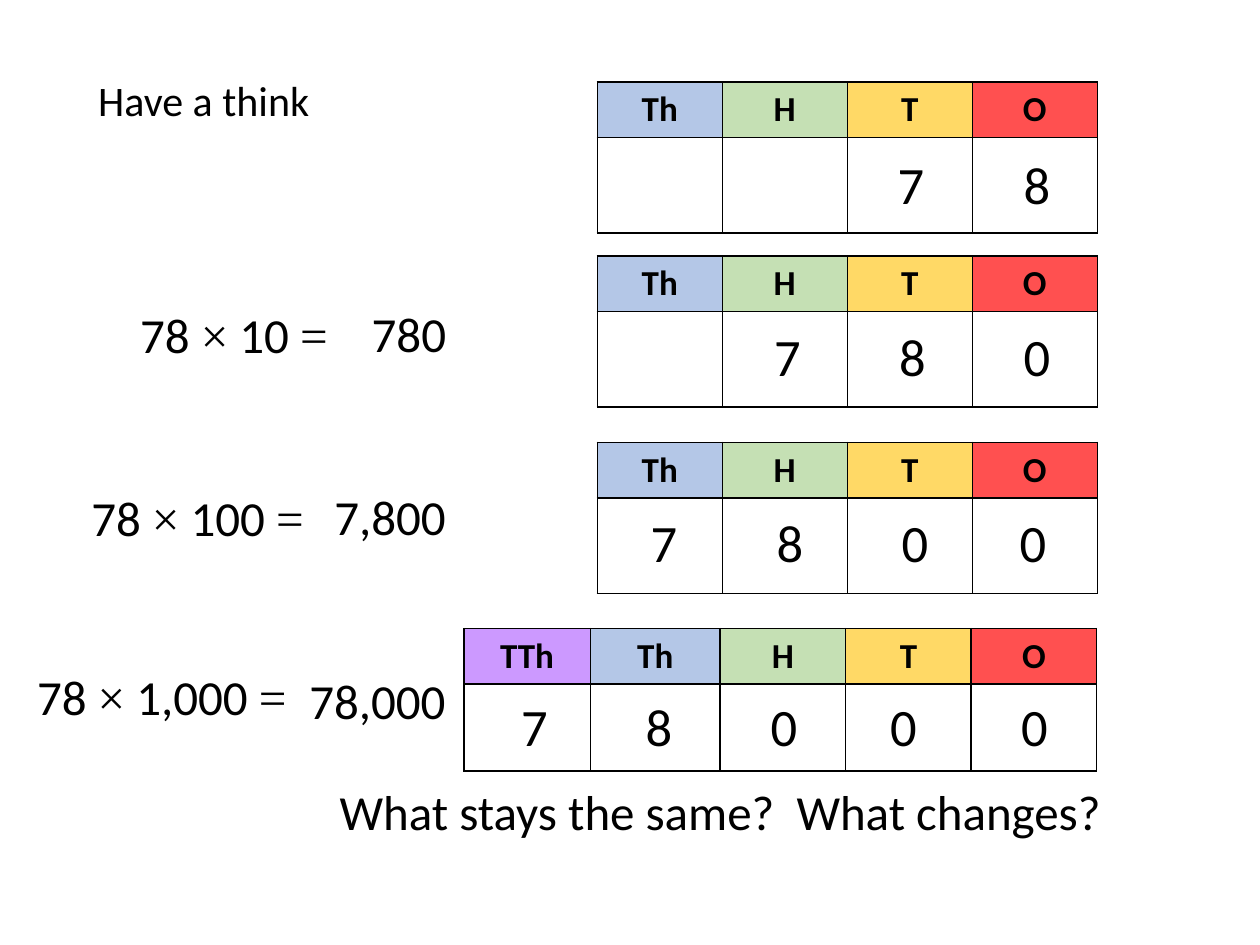
from lxml.etree import SubElement
from pptx import Presentation
from pptx.dml.color import RGBColor
from pptx.enum.text import MSO_ANCHOR, MSO_AUTO_SIZE, PP_ALIGN
from pptx.oxml.ns import qn
from pptx.util import Cm, Pt


def paint(text):
    return RGBColor.from_string(text)


class Page:
    font = "Calibri"
    sign = "Times New Roman"
    ink = "000000"
    fills = {"TTh": "CC99FF", "Th": "B4C7E7", "H": "C5E0B4",
             "T": "FFD966", "O": "FF5050"}

    def __init__(self, slide):
        self.slide = slide

    def style(self, run, size, bold=False):
        run.font.name = self.sign if run.text.strip() in ("×", "=") else self.font
        run.font.size = Pt(size)
        run.font.bold = bold
        run.font.color.rgb = paint(self.ink)

    def text(self, parts, left, top, width, height, size,
             align=PP_ALIGN.CENTER, wrap=False):
        box = self.slide.shapes.add_textbox(
            Cm(left), Cm(top), Cm(width), Cm(height))
        frame = box.text_frame
        frame.word_wrap = wrap
        frame.auto_size = MSO_AUTO_SIZE.SHAPE_TO_FIT_TEXT
        line = frame.paragraphs[0]
        line.alignment = align
        for part in parts:
            run = line.add_run()
            run.text = part
            self.style(run, size)

    def border(self, cell):
        props = cell._tc.get_or_add_tcPr()
        for side in ("lnL", "lnR", "lnT", "lnB"):
            edge = SubElement(props, qn(f"a:{side}"), w=str(Pt(1)))
            fill = SubElement(edge, qn("a:solidFill"))
            SubElement(fill, qn("a:srgbClr"), val=self.ink)

    def table(self, heads, left, top, widths, heights):
        shape = self.slide.shapes.add_table(
            2, len(heads), Cm(left), Cm(top), Cm(sum(widths)), Cm(sum(heights)))
        grid = shape.table
        grid.horz_banding = False
        for row, height in zip(grid.rows, heights):
            row.height = Cm(height)
        for col, (head, width) in enumerate(zip(heads, widths)):
            grid.columns[col].width = Cm(width)
            top_cell, low_cell = grid.cell(0, col), grid.cell(1, col)
            self.border(top_cell)
            self.border(low_cell)
            low_cell.fill.background()
            top_cell.fill.solid()
            top_cell.fill.fore_color.rgb = paint(self.fills[head])
            top_cell.vertical_anchor = MSO_ANCHOR.MIDDLE
            top_cell.text_frame.text = head
            line = top_cell.text_frame.paragraphs[0]
            line.alignment = PP_ALIGN.CENTER
            self.style(line.runs[0], 20, True)

    def digits(self, marks, lefts, top):
        for mark, left in zip(marks, lefts):
            self.text([mark], left, top, 1.07, 1.55, 30)

    def sum(self, times, left, top, width):
        self.text(["78 ", "×", f" {times} ", "= "], left, top, width, 1.45, 28)

    def answer(self, value, top, width):
        self.text([value], 9.26 - width, top, width, 1.45, 28)


def main():
    deck = Presentation()
    deck.slide_width, deck.slide_height = Cm(25.4), Cm(19.05)
    page = Page(deck.slides.add_slide(deck.slide_layouts[6]))

    heads = ["Th", "H", "T", "O"]
    for top in (1.65, 5.16, 8.92):
        page.table(heads, 12.04, top, [2.52] * 4, [1.11, 1.93])
    page.table(["TTh"] + heads, 9.35, 12.67,
               [2.55, 2.62, 2.53, 2.53, 2.53], [1.11, 1.75])

    page.digits("78", [17.83, 20.37], 2.95)
    page.digits("780", [15.34, 17.86, 20.37], 6.4)
    page.digits("7800", [12.85, 15.39, 17.91, 20.29], 10.16)
    page.digits("78000", [10.24, 12.75, 15.27, 17.68, 20.32], 13.87)

    page.sum("10", 2.39, 6.02, 4.9)
    page.sum("100", 1.4, 9.7, 5.41)
    page.sum("1,000", 0.3, 13.31, 6.17)

    page.answer("780", 5.99, 2.03)
    page.answer("7,800", 9.68, 2.79)
    page.answer("78,000", 13.39, 3.3)

    page.text(["Have a think"], 1.73, 1.37, 5.82, 1.27, 24, PP_ALIGN.LEFT, True)
    page.text(["What stays the same?  What changes?"],
              6.5, 15.62, 16.03, 1.45, 28)
    deck.save("out.pptx")


if __name__ == "__main__":
    main()
